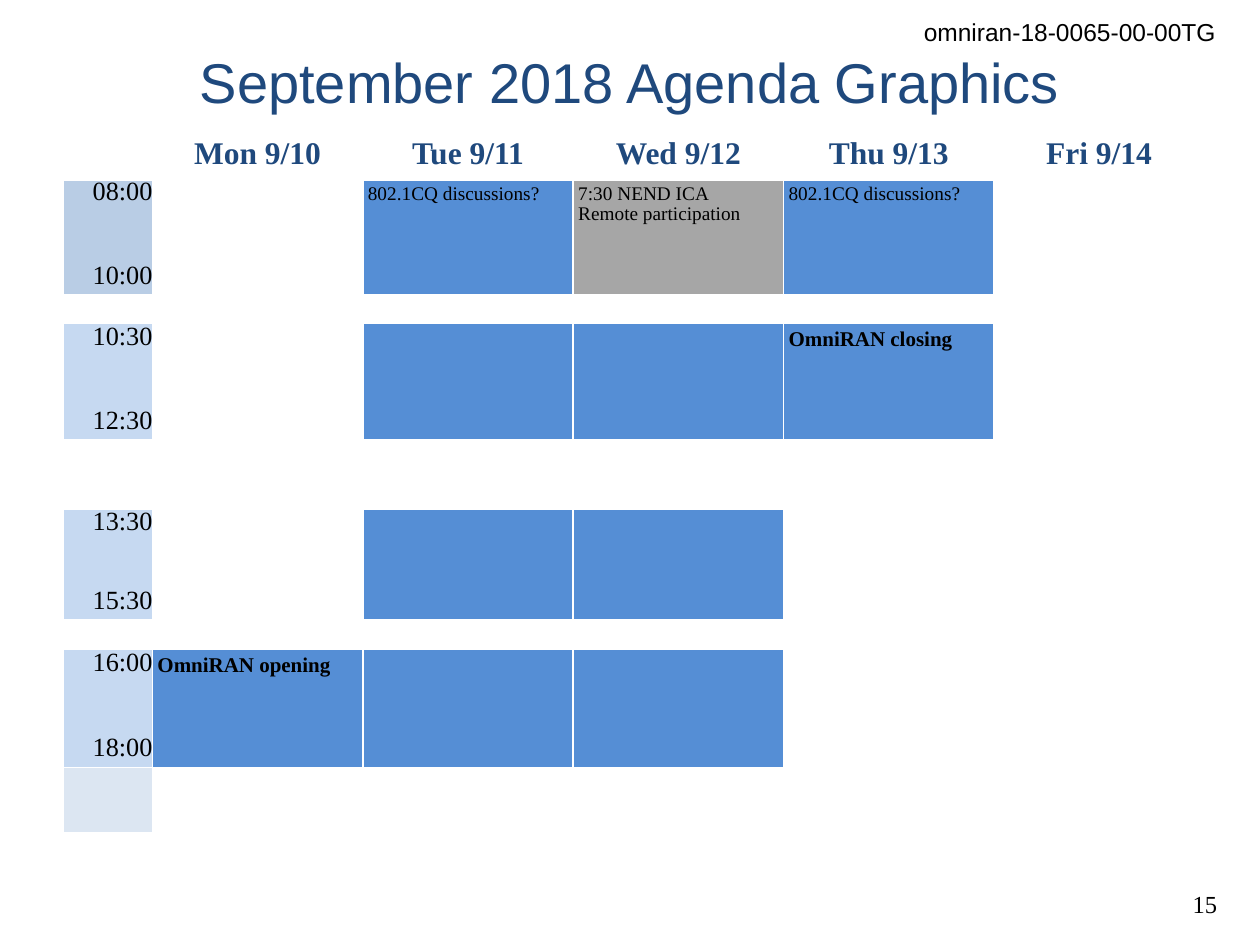
from lxml import etree
from pptx import Presentation
from pptx import util as u
from pptx.dml.color import RGBColor
from pptx.enum import text
from pptx.oxml import ns

SERIF, SANS = "Times New Roman", "Arial"
NAVY, BLACK, WHITE = "1F497D", "000000", "FFFFFF"
BUSY, REMOTE = "558ED5", "A6A6A6"
LEFT, CENTER, RIGHT = text.PP_ALIGN.LEFT, text.PP_ALIGN.CENTER, text.PP_ALIGN.RIGHT


def colour(value):
    return RGBColor.from_string(value)


class AgendaSlide:
    def __init__(self, deck):
        self.slide = deck.slides.add_slide(deck.slide_layouts[6])

    def add_words(self, paragraph, words, size, font=SERIF, ink=BLACK, bold=False, align=LEFT):
        paragraph.alignment = align
        run = paragraph.add_run()
        run.text = words
        run.font.size, run.font.name, run.font.bold = u.Pt(size), font, bold
        run.font.color.rgb = colour(ink)

    def label(self, words, left, top, width, height, size, wrap=False, bottom=0.05, **look):
        box = self.slide.shapes.add_textbox(*map(u.Inches, (left, top, width, height)))
        frame = box.text_frame
        frame.word_wrap = wrap
        frame.margin_bottom = u.Inches(bottom)
        frame.vertical_anchor = text.MSO_ANCHOR.MIDDLE
        self.add_words(frame.paragraphs[0], words, size, **look)

    def table(self, left, top, columns, rows):
        frame = self.slide.shapes.add_table(
            len(rows), len(columns), u.Inches(left), u.Inches(top),
            u.Inches(sum(columns)), u.Inches(sum(rows)))
        grid = frame.table
        grid.horz_banding = False
        for column, width in zip(grid.columns, columns):
            column.width = u.Inches(width)
        for row, height in zip(grid.rows, rows):
            row.height = u.Inches(height)
        return grid

    def cell(self, cell, fill=WHITE, lines=(), margin=0, gap=0, spacing=None, bottom_line=1, **look):
        """Fill and border one cell; gap is the space in points between its lines."""
        cell.margin_left = cell.margin_right = u.Inches(margin)
        cell.margin_top = cell.margin_bottom = u.Inches(margin)
        cell.fill.solid()
        cell.fill.fore_color.rgb = colour(fill)
        self.borders(cell, bottom_line)
        frame = cell.text_frame
        for index, words in enumerate(lines):
            paragraph = frame.add_paragraph() if index else frame.paragraphs[0]
            paragraph.line_spacing = spacing
            paragraph.space_before = u.Pt(gap if index else 0)
            self.add_words(paragraph, words, **look)
        if not lines:
            # A tiny end mark keeps empty cells from stretching thin rows.
            etree.SubElement(frame.paragraphs[0]._p, ns.qn("a:endParaRPr"), sz="100")

    def borders(self, cell, bottom_line):
        properties = cell._tc.get_or_add_tcPr()
        for place, (side, width) in enumerate(
                (("a:lnL", 1), ("a:lnR", 1), ("a:lnT", 1), ("a:lnB", bottom_line))):
            line = etree.Element(ns.qn(side), w=str(u.Pt(width)))
            solid = etree.SubElement(line, ns.qn("a:solidFill"))
            etree.SubElement(solid, ns.qn("a:srgbClr"), val=WHITE)
            properties.insert(place, line)


DAYS = ["Mon 9/10", "Tue 9/11", "Wed 9/12", "Thu 9/13", "Fri 9/14"]
COLUMN_WIDTHS = [0.71] + [1.67] * len(DAYS)
ROW_HEIGHTS = [0.34, 0.91, 0.23, 0.91, 0.22, 0.33, 0.86, 0.24, 0.92, 0.02, 0.5]

# row: (start, end, fill, points between the two times)
TIMES = {
    1: ("08:00", "10:00", "B9CDE5", 32),
    3: ("10:30", "12:30", "C6D9F1", 32),
    6: ("13:30", "15:30", "C6D9F1", 29),
    8: ("16:00", "18:00", "C6D9F1", 33),
}
BUSY_COLUMNS = {1: (2, 4), 3: (2, 3, 4), 6: (2, 3), 8: (1, 2, 3)}
# (row, column): lines, size, bold
SESSIONS = {
    (1, 2): (["802.1CQ discussions?"], 11, False),
    (1, 3): (["7:30 NEND ICA", "Remote participation"], 11, False),
    (1, 4): (["802.1CQ discussions?"], 11, False),
    (3, 4): (["OmniRAN closing"], 12, True),
    (8, 1): (["OmniRAN opening"], 12, True),
}
# (first row, last row, columns)
MERGES = [(1, 3, [5]), (4, 5, range(5)), (5, 8, [5]), (6, 8, [4]), (9, 10, range(5))]


def fill_agenda(page, grid):
    for row in range(len(ROW_HEIGHTS)):
        for column in range(len(COLUMN_WIDTHS)):
            cell = grid.cell(row, column)
            if row == 0:
                day = [DAYS[column - 1]] if column else []
                page.cell(cell, lines=day, size=18, ink=NAVY,
                          bold=True, align=CENTER, bottom_line=3)
            elif column == 0 and row in TIMES:
                start, end, fill, gap = TIMES[row]
                page.cell(cell, fill, [start, end], gap=gap, spacing=0.95,
                          size=15, align=RIGHT)
            elif column == 0 and row >= 9:
                page.cell(cell, "DCE6F2")
            else:
                fill = BUSY if column in BUSY_COLUMNS.get(row, ()) else WHITE
                if (row, column) == (1, 3):
                    fill = REMOTE
                lines, size, bold = SESSIONS.get((row, column), ([], 11, False))
                page.cell(cell, fill, lines, margin=0.04 if lines else 0,
                          spacing=0.95, size=size, bold=bold)
    for first, last, columns in MERGES:
        for column in columns:
            grid.cell(first, column).merge(grid.cell(last, column))


def main():
    deck = Presentation()
    deck.slide_width, deck.slide_height = u.Inches(10), u.Inches(7.5)
    page = AgendaSlide(deck)
    page.label("omniran-18-0065-00-00TG", 7.22, 0.08, 2.53, 0.34, 14, font=SANS, align=RIGHT)
    page.label("15", 9.33, 7, 0.43, 0.34, 14, align=RIGHT)
    page.label("September 2018 Agenda Graphics", 0.5, 0.3, 9, 0.78, 32, wrap=True,
               bottom=0.14, font=SANS, ink=NAVY, align=CENTER)
    fill_agenda(page, page.table(0.5, 1.08, COLUMN_WIDTHS, ROW_HEIGHTS))
    deck.save("out.pptx")


if __name__ == "__main__":
    main()
